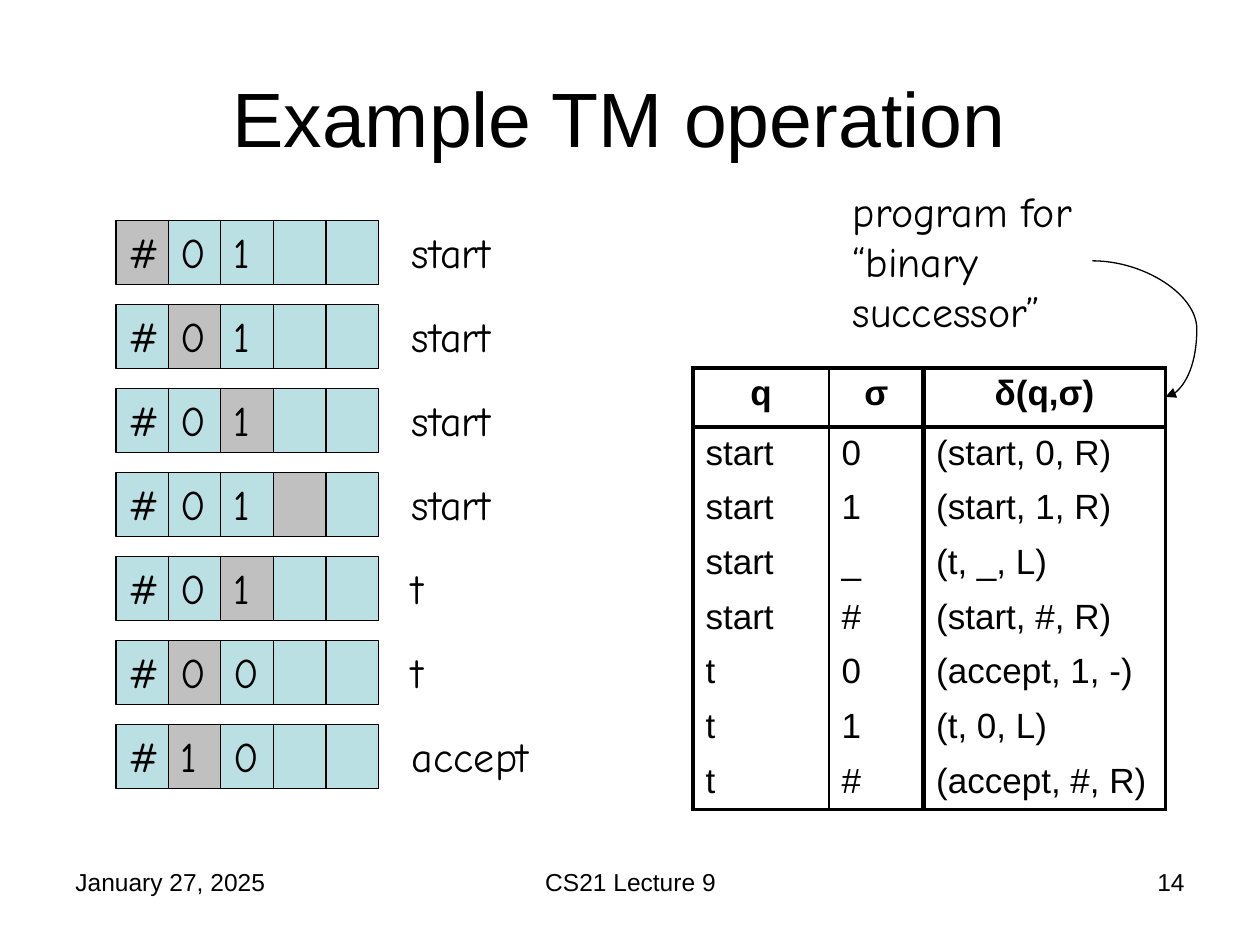
from typing import NamedTuple

from lxml import etree
from pptx import Presentation
from pptx import util as u
from pptx.dml.color import RGBColor
from pptx.enum import shapes, text
from pptx.oxml.ns import qn

BLACK, TEAL, GREY = "000000", "BBE0E3", "C0C0C0"
SANS, HAND = "Arial", "Comic Neue"
LEFT, MID, RIGHT = text.PP_ALIGN.LEFT, text.PP_ALIGN.CENTER, text.PP_ALIGN.RIGHT


class Step(NamedTuple):
    tape: str
    head: int
    state: str


class Label(NamedTuple):
    words: str
    left: float
    top: float
    width: float
    height: float
    size: int = 24
    face: str = HAND
    align: text.PP_ALIGN = LEFT


STEPS = [
    Step("#01", 0, "start"),
    Step("#01", 1, "start"),
    Step("#01", 2, "start"),
    Step("#01", 3, "start"),
    Step("#01", 2, "t"),
    Step("#00", 1, "t"),
    Step("#10", 1, "accept"),
]
RULES = [
    ("q", "σ", "δ(q,σ)"),
    ("start", "0", "(start, 0, R)"),
    ("start", "1", "(start, 1, R)"),
    ("start", "_", "(t, _, L)"),
    ("start", "#", "(start, #, R)"),
    ("t", "0", "(accept, 1, -)"),
    ("t", "1", "(t, 0, L)"),
    ("t", "#", "(accept, #, R)"),
]
LABELS = [
    Label("program for “binary successor”", 6.67, 1.42, 2, 1.3),
    Label("January 27, 2025", 0.5, 6.83, 2.33, 0.52, 14, SANS),
    Label("CS21 Lecture 9", 3.42, 6.83, 3.17, 0.52, 14, SANS, MID),
    Label("14", 7.17, 6.83, 2.33, 0.52, 14, SANS, RIGHT),
]


def color(code: str) -> RGBColor:
    return RGBColor.from_string(code)


def write(frame, words: str, size: int, face: str, align=LEFT, bold=False) -> None:
    frame.word_wrap = True
    para = frame.paragraphs[0]
    para.text = words
    para.alignment = align
    font = para.font
    font.size, font.name, font.bold = u.Pt(size), face, bold
    font.color.rgb = color(BLACK)


def add_label(slide, label: Label) -> None:
    box = slide.shapes.add_textbox(*map(u.Inches, label[1:5]))
    write(box.text_frame, label.words, label.size, label.face, label.align)


def add_square(slide, left: float, top: float, side: float, sign: str, fill: str) -> None:
    box = slide.shapes.add_shape(
        shapes.MSO_SHAPE.RECTANGLE, *map(u.Inches, (left, top, side, 0.51)))
    box.shadow.inherit = False
    box.fill.solid()
    box.fill.fore_color.rgb = color(fill)
    box.line.color.rgb = color(BLACK)
    box.line.width = u.Pt(0.75)
    if sign:
        write(box.text_frame, sign, 24, HAND)
        box.text_frame.vertical_anchor = text.MSO_ANCHOR.TOP


def add_step(slide, step: Step, top: float) -> None:
    side = 5 / 12
    for i, sign in enumerate(step.tape.ljust(5)):
        fill = GREY if i == step.head else TEAL
        add_square(slide, 0.92 + i * side, top, side, sign.strip(), fill)
    add_label(slide, Label(step.state, 3.17, top, 1.25, 0.5))


def set_edge(cell, side: str, width: float) -> None:
    edge = etree.SubElement(cell._tc.get_or_add_tcPr(), qn(f"a:ln{side}"))
    if not width:
        etree.SubElement(edge, qn("a:noFill"))
        return
    edge.set("w", str(u.Pt(width)))
    fill = etree.SubElement(edge, qn("a:solidFill"))
    etree.SubElement(fill, qn("a:srgbClr"), val=BLACK)


def add_rules(slide) -> None:
    frame = slide.shapes.add_table(
        len(RULES), 3, *map(u.Inches, (5.5, 2.92, 3.75, 3.51)))
    table = frame.table
    table.first_row = table.horz_banding = False
    for col, width in zip(table.columns, (1.08, 0.75, 1.92)):
        col.width = u.Inches(width)
    # Line widths from left to right and from top to bottom
    across = [2.25, 1, 3, 2.25]
    down = [2.25, 3] + [0] * (len(RULES) - 2) + [2.25]
    for r, rule in enumerate(RULES):
        table.rows[r].height = u.Inches(0.43 if r else 0.47)
        for c, words in enumerate(rule):
            cell = table.cell(r, c)
            write(cell.text_frame, words, 20, SANS, LEFT if r else MID, r == 0)
            edges = {"L": across[c], "R": across[c + 1],
                     "T": down[r], "B": down[r + 1]}
            for side, width in edges.items():
                set_edge(cell, side, width)
            cell.fill.background()


def add_arrow(slide) -> None:
    arrow = slide.shapes.add_connector(
        shapes.MSO_CONNECTOR.CURVE, *map(u.Inches, (8.67, 2.07, 9.25, 3.15)))
    arrow.line.color.rgb = color(BLACK)
    arrow.line.width = u.Pt(0.75)
    etree.SubElement(arrow.line._get_or_add_ln(), qn("a:tailEnd"), type="triangle")
    props = arrow._element.spPr
    etree.SubElement(props, qn("a:effectLst"))
    # Bend the curve out past the table's right side
    bends = props.find(qn("a:prstGeom")).find(qn("a:avLst"))
    etree.SubElement(bends, qn("a:gd"), name="adj1", fmla="val 142900")


def main() -> None:
    prs = Presentation()
    prs.slide_width, prs.slide_height = u.Inches(10), u.Inches(7.5)
    slide = prs.slides.add_slide(prs.slide_layouts[5])

    # Title
    title = slide.shapes.title
    title.left, title.top = u.Inches(0.5), u.Inches(0.3)
    title.width, title.height = u.Inches(9), u.Inches(1.25)
    write(title.text_frame, "Example TM operation ", 44, SANS, MID)
    title.text_frame.vertical_anchor = text.MSO_ANCHOR.MIDDLE

    # Tape after each step, with the machine's state
    for i, step in enumerate(STEPS):
        add_step(slide, step, 1.75 + i * 2 / 3)

    # Transition table, its caption and the footer
    add_rules(slide)
    for label in LABELS:
        add_label(slide, label)
    add_arrow(slide)

    prs.save("out.pptx")


if __name__ == "__main__":
    main()
